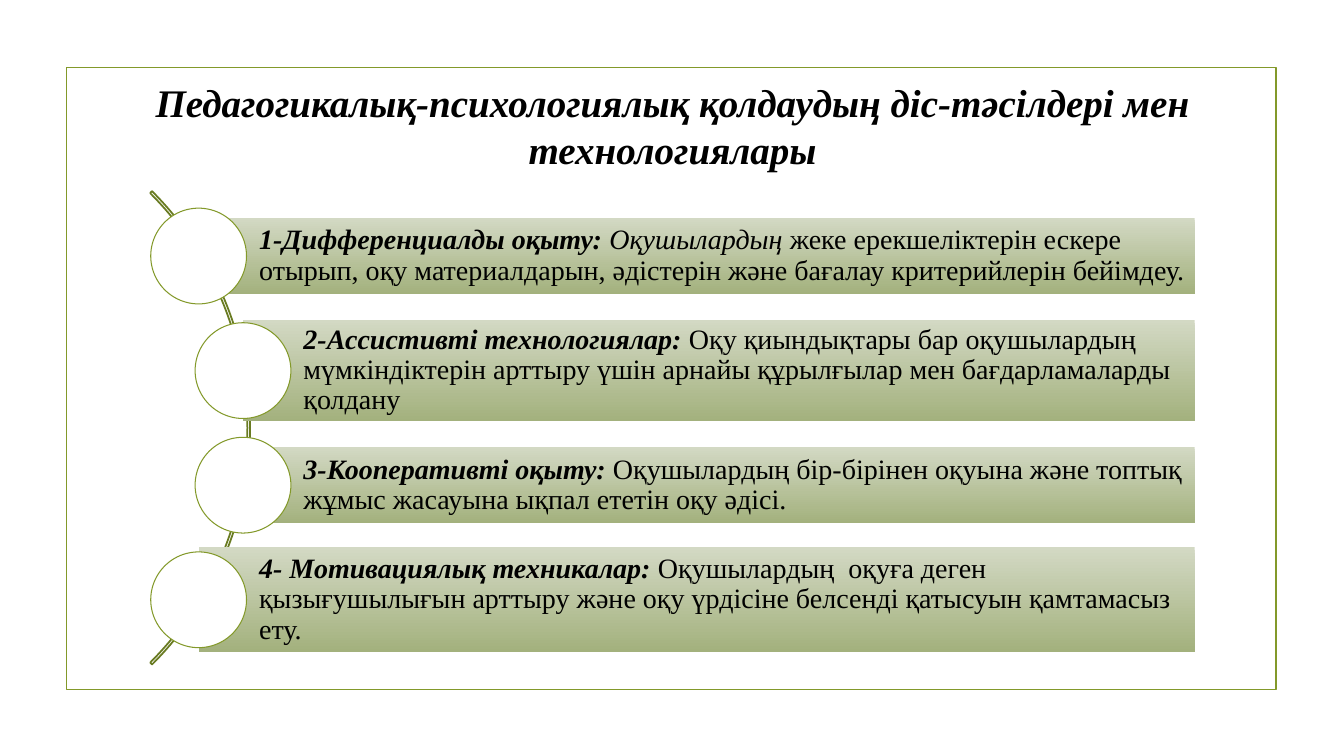
from dataclasses import dataclass

import pptx
import pptx.dml.color
import pptx.enum.shapes
import pptx.enum.text
import pptx.util
from pptx.dml.color import RGBColor
from pptx.enum.shapes import MSO_SHAPE
from pptx.util import Inches, Pt

BLACK = RGBColor(0x00, 0x00, 0x00)
WHITE = RGBColor(0xFF, 0xFF, 0xFF)
OLIVE = RGBColor(0x83, 0x99, 0x2A)
DARK_OLIVE = RGBColor(0x69, 0x7B, 0x22)
BAR_TOP = RGBColor(0xD3, 0xD9, 0xC4)
BAR_BOTTOM = RGBColor(0xA3, 0xB1, 0x7D)
FONT = "Times New Roman"

TITLE = "Педагогикалық-психологиялық қолдаудың діс-тәсілдері мен технологиялары"
BAR_RIGHT = 11.85
CIRCLE = 0.95
FIRST_CENTER, LAST_CENTER = 2.54, 5.95
ARC_CENTER_X, ARC_SIZE = -0.84, 6.64


@dataclass
class Method:
    center_x: float
    bar_height: float
    heading: str
    lead: str  # italic opening of the description
    text: str


METHODS = [
    Method(1.97, 0.76, "1-Дифференциалды оқыту: ", "Оқушылардың",
           " жеке ерекшеліктерін ескере отырып, оқу материалдарын, "
           "әдістерін және бағалау критерийлерін бейімдеу."),
    Method(2.41, 1.01, "2-Ассистивті технологиялар: ", "",
           "Оқу қиындықтары бар оқушылардың мүмкіндіктерін арттыру үшін "
           "арнайы құрылғылар мен бағдарламаларды қолдану"),
    Method(2.41, 0.76, "3-Кооперативті оқыту: ", "",
           "Оқушылардың бір-бірінен оқуына және топтық жұмыс жасауына "
           "ықпал ететін оқу әдісі."),
    Method(1.97, 1.04, "4- Мотивациялық техникалар: ", "",
           "Оқушылардың  оқуға деген қызығушылығын арттыру және оқу "
           "үрдісіне белсенді қатысуын қамтамасыз ету."),
]


def add_shape(s: pptx.slide.Slide, kind: MSO_SHAPE, x: float, y: float,
              w: float, h: float, line: RGBColor | None = None,
              width: float = 1.25) -> pptx.shapes.autoshape.Shape:
    """Add an unfilled shape without shadow."""
    sp = s.shapes.add_shape(kind, Inches(x), Inches(y), Inches(w), Inches(h))
    sp.shadow.inherit = False
    sp.fill.background()
    if line is None:
        sp.line.fill.background()
    else:
        sp.line.color.rgb = line
        sp.line.width = Pt(width)
    return sp


def add_title(s: pptx.slide.Slide) -> None:
    sp = s.shapes.title
    sp.left, sp.top = Inches(1.42), Inches(0.77)
    sp.width, sp.height = Inches(10.5), Inches(0.95)
    tf = sp.text_frame
    tf.text = TITLE
    tf.word_wrap = True
    tf.auto_size = pptx.enum.text.MSO_AUTO_SIZE.NONE
    tf.vertical_anchor = pptx.enum.text.MSO_ANCHOR.MIDDLE
    p = tf.paragraphs[0]
    p.alignment = pptx.enum.text.PP_ALIGN.CENTER
    p.font.name, p.font.size = FONT, Pt(27.9)
    p.font.bold = p.font.italic = True
    p.font.color.rgb = BLACK


def add_method(s: pptx.slide.Slide, m: Method, center_y: float) -> None:
    # Gradient bar
    sp = add_shape(s, MSO_SHAPE.RECTANGLE, m.center_x,
                   center_y - m.bar_height / 2,
                   BAR_RIGHT - m.center_x, m.bar_height)
    sp.fill.gradient()
    sp.fill.gradient_angle = 270
    for stop, color in zip(sp.fill.gradient_stops, (BAR_TOP, BAR_BOTTOM)):
        stop.color.rgb = color

    # Text of the bar
    tf = sp.text_frame
    tf.word_wrap = True
    tf.vertical_anchor = pptx.enum.text.MSO_ANCHOR.MIDDLE
    tf.margin_left = Inches(0.6)
    tf.margin_top = tf.margin_right = tf.margin_bottom = Inches(0.06)
    p = tf.paragraphs[0]
    p.alignment = pptx.enum.text.PP_ALIGN.LEFT
    p.line_spacing = 0.9
    p.font.name, p.font.size = FONT, Pt(20)
    p.font.color.rgb = BLACK
    for text, bold, italic in ((m.heading, True, True), (m.lead, False, True),
                               (m.text, False, False)):
        if text:
            r = p.add_run()
            r.text = text
            r.font.bold, r.font.italic = bold, italic

    # Circle at the left end
    sp = add_shape(s, MSO_SHAPE.OVAL, m.center_x - CIRCLE / 2,
                   center_y - CIRCLE / 2, CIRCLE, CIRCLE, OLIVE, 0.75)
    sp.fill.solid()
    sp.fill.fore_color.rgb = WHITE


def main() -> None:
    prs = pptx.Presentation()
    prs.slide_width, prs.slide_height = Inches(13.33), Inches(7.5)
    s = prs.slides.add_slide(prs.slide_layouts[5])

    # Frame and title
    add_shape(s, MSO_SHAPE.RECTANGLE, 0.66, 0.67, 12, 6.17, OLIVE)
    add_title(s)

    # Thin arc from -45 to 45 degrees behind the list
    middle = (FIRST_CENTER + LAST_CENTER) / 2
    arc = add_shape(s, MSO_SHAPE.BLOCK_ARC, ARC_CENTER_X - ARC_SIZE / 2,
                    middle - ARC_SIZE / 2, ARC_SIZE, ARC_SIZE, DARK_OLIVE)
    for i, value in enumerate((189, 27, 0.004)):
        arc.adjustments[i] = value

    # Evenly spaced methods
    step = (LAST_CENTER - FIRST_CENTER) / (len(METHODS) - 1)
    for i, m in enumerate(METHODS):
        add_method(s, m, FIRST_CENTER + i * step)

    prs.save("out.pptx")


if __name__ == "__main__":
    main()
